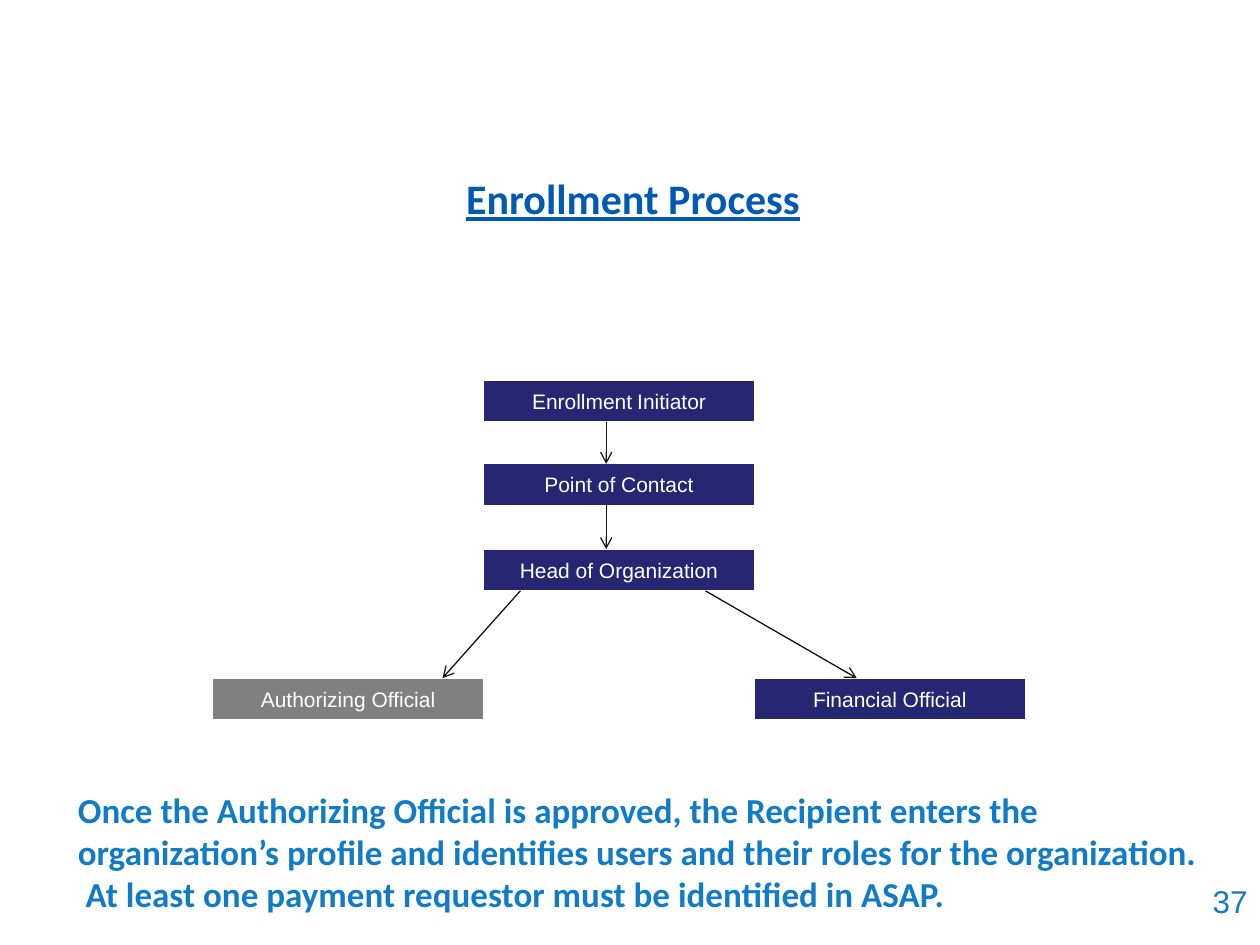
import pptx
import pptx.util
import pptx.dml.color
import pptx.enum.shapes
import pptx.enum.text
from lxml import etree

Cm = pptx.util.Cm
Pt = pptx.util.Pt
ALIGN = pptx.enum.text.PP_ALIGN
HUES = {
    "title": "005AB4",
    "body": "117CC5",
    "navy": "262673",
    "gray": "808080",
    "white": "FFFFFF",
    "ink": "131217",
}
BOX_W, BOX_H = 5.46, 0.84
MID = 9.75
ROWS = [7.67, 9.35, 11.07, 13.67]
STEM = 12.22


def hue(name):
    return pptx.dml.color.RGBColor.from_string(HUES[name])


def write(shape, text, size=12, face="Arial", color="white", bold=False,
          under=False, align=ALIGN.CENTER, wrap=True,
          anchor=pptx.enum.text.MSO_ANCHOR.TOP):
    frame = shape.text_frame
    frame.word_wrap = wrap
    frame.auto_size = pptx.enum.text.MSO_AUTO_SIZE.NONE
    frame.vertical_anchor = anchor
    para = frame.paragraphs[0]
    para.alignment = align
    parts = [(text, size)] if isinstance(text, str) else text
    for part, points in parts:
        run = para.add_run()
        run.text = part
        font = run.font
        font.name, font.size = face, Pt(points)
        font.bold, font.underline = bold, under
        font.color.rgb = hue(color)


def add_head(slide, text):
    head = slide.shapes.title
    head.left, head.top = Cm(1.9), Cm(3.35)
    head.width, head.height = Cm(21.72), Cm(1.63)
    write(head, text, size=24, face="Calibri", color="title",
          bold=True, under=True)


def add_note(slide, text, left, top, width, height, **form):
    note = slide.shapes.add_textbox(Cm(left), Cm(top), Cm(width), Cm(height))
    write(note, text, color="body", **form)


def add_role(slide, text, left, top, fill="navy"):
    role = slide.shapes.add_shape(
        pptx.enum.shapes.MSO_SHAPE.FLOWCHART_PROCESS,
        Cm(left), Cm(top), Cm(BOX_W), Cm(BOX_H))
    role.shadow.inherit = False
    role.fill.solid()
    role.fill.fore_color.rgb = hue(fill)
    role.line.color.rgb = hue("white")
    role.line.width = Pt(0.75)
    write(role, text, wrap=False, anchor=pptx.enum.text.MSO_ANCHOR.MIDDLE)


def add_arrow(slide, x1, y1, x2, y2):
    arrow = slide.shapes.add_connector(
        pptx.enum.shapes.MSO_CONNECTOR.STRAIGHT,
        Cm(x1), Cm(y1), Cm(x2), Cm(y2))
    arrow.line.color.rgb = hue("ink")
    arrow.line.width = Pt(0.75)
    tail = etree.SubElement(arrow.line._get_or_add_ln(),
                            pptx.oxml.ns.qn("a:tailEnd"))
    tail.set("type", "arrow")
    etree.SubElement(arrow._element.spPr, pptx.oxml.ns.qn("a:effectLst"))


def main():
    deck = pptx.Presentation()
    deck.slide_width, deck.slide_height = Cm(25.4), Cm(19.05)
    slide = deck.slides.add_slide(deck.slide_layouts[5])
    add_head(slide, "Enrollment Process")

    chain = [
        [("Enrollment", 12), (" ", 10), ("Initiator", 12)],
        "Point of Contact",
        "Head of Organization",
    ]
    for text, top in zip(chain, ROWS):
        add_role(slide, text, MID, top)
    add_role(slide, "Financial Official", MID + BOX_W, ROWS[3])
    add_role(slide, "Authorizing Official", MID - BOX_W, ROWS[3], fill="gray")

    joins = [(STEM, STEM), (STEM, STEM), (10.49, 8.92), (14.22, 17.27)]
    spans = [(0, 1), (1, 2), (2, 3), (2, 3)]
    for (x1, x2), (upper, lower) in zip(joins, spans):
        add_arrow(slide, x1, ROWS[upper] + BOX_H, x2, ROWS[lower])

    add_note(slide,
             "Once the Authorizing Official is approved, the Recipient enters "
             "the organization’s profile and identifies users and their roles "
             "for the organization.  At least one payment requestor must be "
             "identified in ASAP.",
             1.32, 15.77, 23.11, 2.82, size=20, face="Calibri", bold=True,
             align=ALIGN.LEFT)
    add_note(slide, "37", 19.48, 17.65, 5.92, 1.32, size=18,
             align=ALIGN.RIGHT)
    deck.save("out.pptx")


if __name__ == "__main__":
    main()
